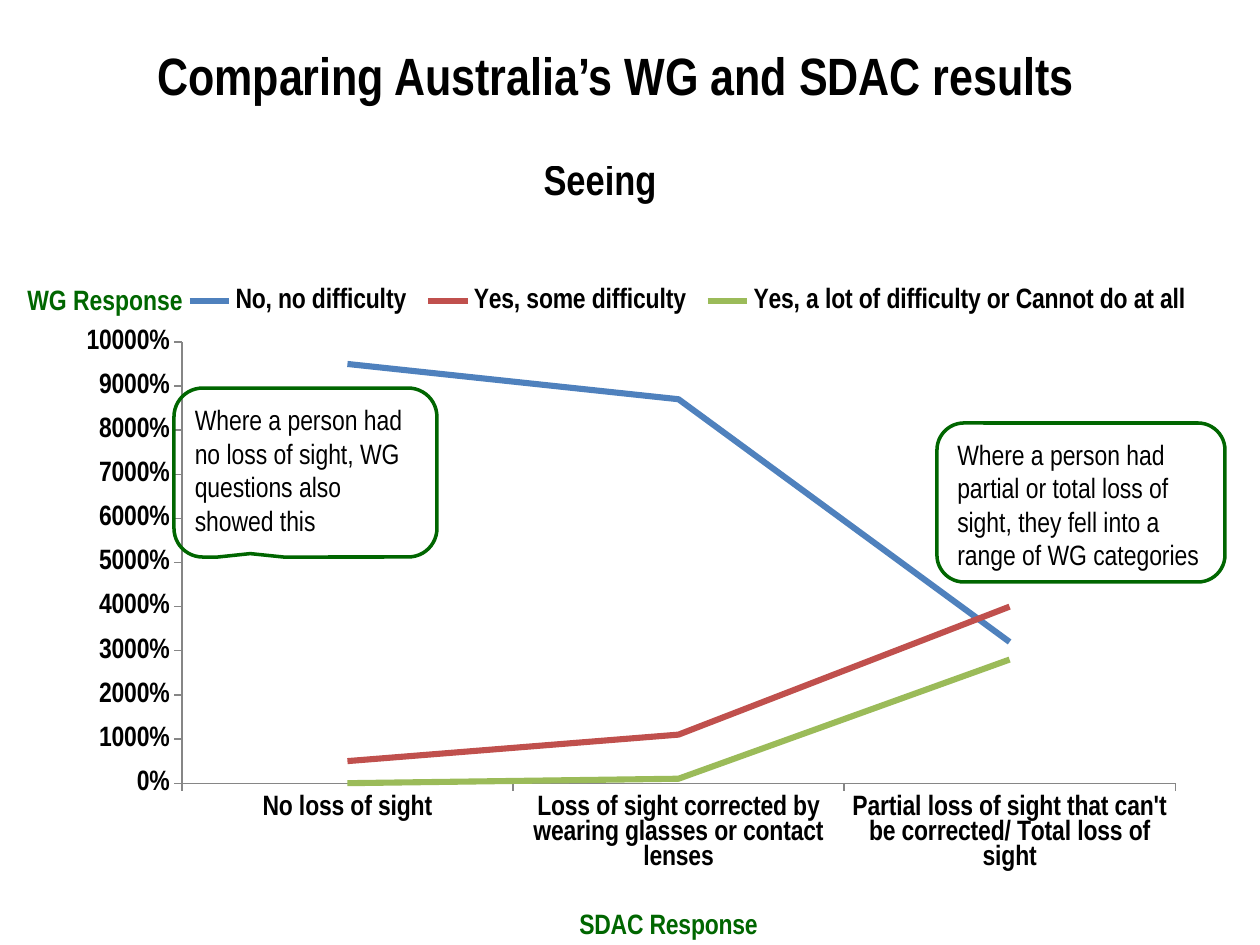
from lxml import etree
from pptx import Presentation
from pptx import util as u
from pptx.chart.data import CategoryChartData
from pptx.dml.color import RGBColor
from pptx.enum import chart as charts, shapes, text
from pptx.oxml import parse_xml
from pptx.oxml.ns import nsdecls, qn

PX = u.Inches(1) / 126
FONT = "Arial Narrow"
BLACK = RGBColor(0x00, 0x00, 0x00)
GREEN = RGBColor(0x00, 0x66, 0x00)
GRAY = RGBColor(0x86, 0x86, 0x86)
BLUE = RGBColor(0x4F, 0x81, 0xBD)
RED = RGBColor(0xC0, 0x50, 0x4D)
LIME = RGBColor(0x9B, 0xBB, 0x59)

CATEGORIES = [
    "No loss of sight",
    "Loss of sight corrected by wearing glasses or contact lenses",
    "Partial loss of sight that can't be corrected/ Total loss of sight",
]
RESPONSES = [
    ("No, no difficulty", (95, 87, 32), BLUE),
    ("Yes, some difficulty", (5, 11, 40), RED),
    ("Yes, a lot of difficulty or Cannot do at all", (0, 1, 28), LIME),
]


def px(*lengths):
    return [u.Emu(round(length * PX)) for length in lengths]


def set_font(font, size=16, color=BLACK, bold=True):
    font.name = FONT
    font.size = u.Pt(size)
    font.bold = bold
    font.color.rgb = color


def write(frame, content, align=text.PP_ALIGN.LEFT, **font_format):
    frame.word_wrap = True
    paragraph = frame.paragraphs[0]
    paragraph.alignment = align
    run = paragraph.add_run()
    run.text = content
    set_font(run.font, **font_format)


def add_label(slide, box, content, **font_format):
    shape = slide.shapes.add_textbox(*px(*box))
    write(shape.text_frame, content, **font_format)


def add_topic(slide, box, content):
    frame = slide.shapes.add_table(1, 1, *px(*box))
    table = frame.table
    table.first_row = table.horz_banding = False
    cell = table.cell(0, 0)
    cell.fill.background()
    cell.margin_left, cell.margin_top, cell.margin_right, cell.margin_bottom = px(0, 0, 10, 0)
    write(cell.text_frame, content, align=text.PP_ALIGN.CENTER, size=24)


def place(element, box, **values):
    old = element.find(qn("c:layout"))
    if old is not None:
        element.remove(old)
    layout = parse_xml(f"<c:layout {nsdecls('c')}><c:manualLayout/></c:layout>")
    settings = dict(values, xMode="edge", yMode="edge", **dict(zip("xywh", box)))
    for name in ("layoutTarget", "xMode", "yMode", "x", "y", "w", "h"):
        if name in settings:
            etree.SubElement(layout[0], qn(f"c:{name}")).set("val", str(settings[name]))
    return layout


def add_response_chart(slide, box):
    data = CategoryChartData(number_format="0")
    data.categories = CATEGORIES
    for name, values, _ in RESPONSES:
        data.add_series(name, values)
    chart = slide.shapes.add_chart(charts.XL_CHART_TYPE.LINE, *px(*box), data).chart
    set_font(chart.font)
    chart.has_title = False
    plot = chart.plots[0]
    plot.vary_by_categories = False
    for series, (_, _, color) in zip(plot.series, RESPONSES):
        series.smooth = False
        series.marker.style = charts.XL_MARKER_STYLE.NONE
        series.format.line.color.rgb = color
        series.format.line.width = u.Pt(3.5)

    for axis in (chart.category_axis, chart.value_axis):
        axis.has_major_gridlines = False
        axis.major_tick_mark = charts.XL_TICK_MARK.OUTSIDE
        axis.format.line.color.rgb = GRAY
        axis.format.line.width = u.Pt(0.75)
        set_font(axis.tick_labels.font)
    values = chart.value_axis
    values.minimum_scale, values.maximum_scale, values.major_unit = 0, 100, 10
    values.tick_labels.number_format = "0%"
    values.tick_labels.number_format_is_linked = False

    title = chart.category_axis.axis_title
    write(title.text_frame, "SDAC Response", color=GREEN)
    title_xml = title._element
    title_xml.find(qn("c:tx")).addnext(place(title_xml, (0.45, 0.94)))

    chart.has_legend = True
    legend = chart.legend
    legend.position = charts.XL_LEGEND_POSITION.TOP
    legend.include_in_layout = False
    set_font(legend.font)
    legend_xml = legend._element
    legend_xml.find(qn("c:legendPos")).addnext(place(legend_xml, (0.1, 0.02, 0.9, 0.05)))

    area = chart._chartSpace.chart.plotArea
    area.insert(0, place(area, (0.104, 0.105, 0.876, 0.653), layoutTarget="inner"))


def add_callout(slide, box, content, tip):
    shape = slide.shapes.add_shape(
        shapes.MSO_SHAPE.ROUNDED_RECTANGULAR_CALLOUT, *px(*box))
    for index, value in enumerate((*tip, 0.17)):
        shape.adjustments[index] = value
    shape.shadow.inherit = False
    shape.fill.background()
    shape.line.color.rgb = GREEN
    shape.line.width = u.Pt(2)
    shape.text_frame.vertical_anchor = text.MSO_ANCHOR.TOP
    write(shape.text_frame, content, bold=False)


def build_comparison(slide):
    add_label(slide, (145, 37, 1022, 77), "Comparing Australia’s WG and SDAC results", size=30)
    add_label(slide, (15, 276, 208, 47), "WG Response", color=GREEN)
    add_topic(slide, (441, 165, 328, 63), "Seeing")
    add_response_chart(slide, (64, 271, 1134, 677))
    add_callout(slide, (174, 388, 263, 169),
                "Where a person had no loss of sight, WG questions also showed this",
                (-0.21, 0.48))
    add_callout(slide, (937, 423, 288, 159),
                "Where a person had partial or total loss of sight, "
                "they fell into a range of WG categories",
                (-0.2, 0.5))


def main():
    presentation = Presentation()
    presentation.slide_width, presentation.slide_height = px(1260, 945)
    build_comparison(presentation.slides.add_slide(presentation.slide_layouts[6]))
    presentation.save("out.pptx")


if __name__ == "__main__":
    main()
